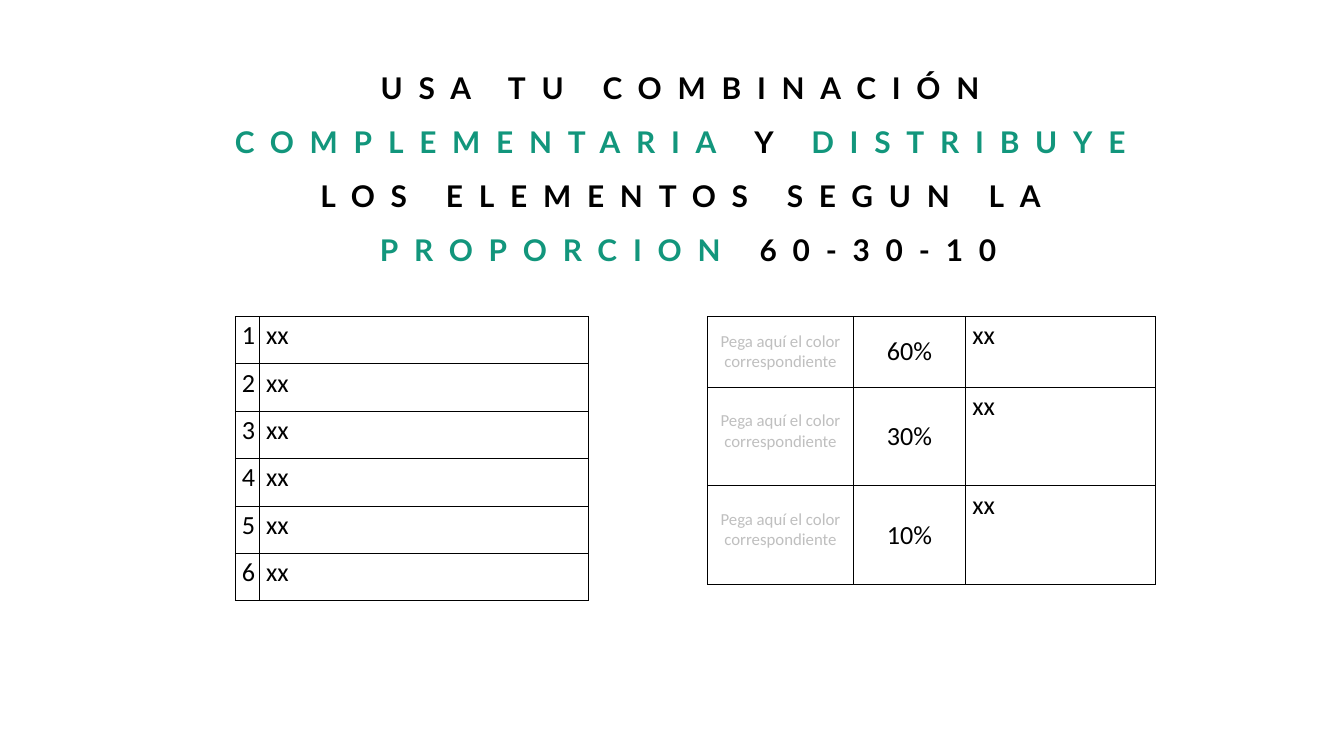
from lxml.etree import SubElement
from pptx import Presentation
from pptx.dml.color import RGBColor
from pptx.enum.text import MSO_ANCHOR, MSO_AUTO_SIZE, PP_ALIGN
from pptx.oxml.ns import qn
from pptx.util import Inches, Pt

COLORS = {"ink": "000000", "accent": "12967C", "hint": "BFBFBF"}
GRID = 0.5  # inches per column and per row
COLUMNS, ROWS = 40, 22.5

TITLE_FONT = {"name": "Lato", "size": Pt(32), "bold": True}
BODY_FONT = {"name": "Calibri", "size": Pt(28), "bold": False}
HINT_FONT = {**BODY_FONT, "size": Pt(18)}

# Cell styles: font, colour, alignment and cell format
LEFT = (BODY_FONT, "ink", PP_ALIGN.LEFT, {"vertical_anchor": MSO_ANCHOR.TOP})
CENTER = (BODY_FONT, "ink", PP_ALIGN.CENTER, {"vertical_anchor": MSO_ANCHOR.MIDDLE})
HINT = (HINT_FONT, "hint", PP_ALIGN.CENTER, {"vertical_anchor": MSO_ANCHOR.MIDDLE})
LOW_HINT = (HINT_FONT, "hint", PP_ALIGN.CENTER,
            {"vertical_anchor": MSO_ANCHOR.TOP, "margin_top": Inches(0.35)})


def apply(target, values):
    for name, value in values.items():
        setattr(target, name, value)


def grid(units):
    return Inches(units * GRID)


class SlideBuilder:
    def __init__(self, presentation):
        self.slide = presentation.slides.add_slide(presentation.slide_layouts[6])

    def add_run(self, paragraph, text, font, color):
        run = paragraph.add_run()
        run.text = text
        apply(run.font, font)
        run.font.color.rgb = RGBColor.from_string(COLORS[color])
        return run

    def title(self, left, top, width, height, runs, line_spacing, letter_spacing):
        shape = self.slide.shapes.add_textbox(*map(grid, (left, top, width, height)))
        apply(shape.text_frame, {
            "word_wrap": True, "auto_size": MSO_AUTO_SIZE.SHAPE_TO_FIT_TEXT,
            "margin_left": 0, "margin_top": 0, "margin_right": 0, "margin_bottom": 0,
        })
        paragraph = shape.text_frame.paragraphs[0]
        apply(paragraph, {"alignment": PP_ALIGN.CENTER, "line_spacing": Pt(line_spacing)})
        for text, color in runs:
            run = self.add_run(paragraph, text, TITLE_FONT, color)
            run.font._element.set("spc", str(round(letter_spacing * 100)))

    def table(self, left, top, widths, heights, rows):
        frame = self.slide.shapes.add_table(
            len(heights), len(widths), grid(left), grid(top),
            grid(sum(widths)), grid(sum(heights)))
        table = frame.table
        apply(table, {"first_row": False, "horz_banding": False})
        for column, width in zip(table.columns, widths):
            column.width = grid(width)
        for table_row, height, contents in zip(table.rows, heights, rows):
            table_row.height = grid(height)
            for cell, (text, style) in zip(table_row.cells, contents):
                self.fill_cell(cell, text, *style)

    def fill_cell(self, cell, text, font, color, alignment, cell_format):
        apply(cell, cell_format)
        paragraph = cell.text_frame.paragraphs[0]
        paragraph.alignment = alignment
        self.add_run(paragraph, text, font, color)
        # Borders come before the fill in the cell properties
        properties = cell._tc.get_or_add_tcPr()
        for side in ("L", "R", "T", "B"):
            line = SubElement(properties, qn(f"a:ln{side}"), w=str(Pt(1)))
            fill = SubElement(line, qn("a:solidFill"))
            SubElement(fill, qn("a:srgbClr"), val=COLORS["ink"])
        cell.fill.background()


def main():
    presentation = Presentation()
    apply(presentation, {"slide_width": grid(COLUMNS), "slide_height": grid(ROWS)})
    builder = SlideBuilder(presentation)

    # Heading
    builder.title(6.58, 1.54, 27.8, 6.3, [
        ("USA TU COMBINACIÓN ", "ink"), ("COMPLEMENTARIA", "accent"),
        (" Y ", "ink"), ("DISTRIBUYE", "accent"),
        (" LOS ELEMENTOS SEGUN LA ", "ink"), ("PROPORCION", "accent"),
        (" 60-30-10", "ink"),
    ], line_spacing=57.9, letter_spacing=16.9)

    # Numbered elements
    builder.table(7, 9.42, [0.72, 9.78], [1.41] * 6,
                  [[(str(number), LEFT), ("xx", LEFT)] for number in range(1, 7)])

    # Colour proportions
    proportions = [("60%", HINT), ("30%", LOW_HINT), ("10%", LOW_HINT)]
    builder.table(21.06, 9.42, [4.34, 3.34, 5.66], [2.1, 2.94, 2.94], [
        [("Pega aquí el color correspondiente", hint), (share, CENTER), ("xx", LEFT)]
        for share, hint in proportions])

    presentation.save("out.pptx")


if __name__ == "__main__":
    main()
